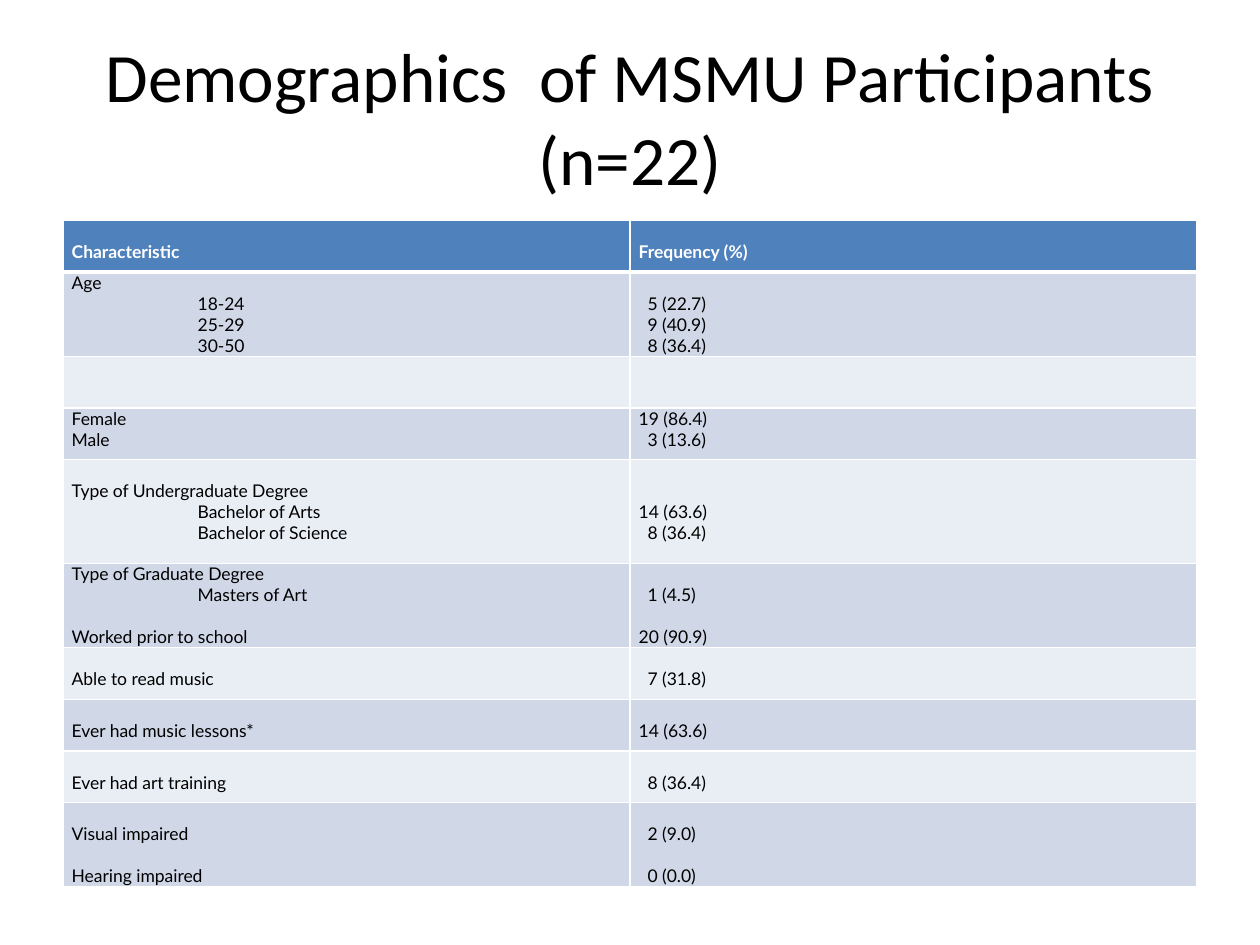
from lxml import etree
from pptx import Presentation
from pptx.dml.color import RGBColor
from pptx.enum.text import MSO_ANCHOR, PP_ALIGN
from pptx.oxml.ns import qn
from pptx.util import Pt

MIDDLE = MSO_ANCHOR.MIDDLE
TOP = MSO_ANCHOR.TOP
CENTER = PP_ALIGN.CENTER
BLACK = RGBColor(0x00, 0x00, 0x00)
WHITE = RGBColor(0xFF, 0xFF, 0xFF)
BLUE = RGBColor(0x4F, 0x81, 0xBD)
BANDS = (RGBColor(0xE9, 0xED, 0xF4), RGBColor(0xD0, 0xD8, 0xE8))

LINE = 12
LABEL_INDENT = 72
DIGIT_INDENT = 5.1
SHORT, MEDIUM, TALL = 29.5, 48, 59.5

ROWS = [
    (SHORT, [("", ""), ("Characteristic", "Frequency (%)")]),
    (MEDIUM, [("Age", ""), ("18-24", "5 (22.7)"), ("25-29", "9 (40.9)"),
              ("30-50", "8 (36.4)")]),
    (SHORT, []),
    (SHORT, [("Female", "19 (86.4)"), ("Male", "3 (13.6)")]),
    (TALL, [("", ""), ("Type of Undergraduate Degree", ""),
            ("Bachelor of Arts", "14 (63.6)"), ("Bachelor of Science", "8 (36.4)")]),
    (MEDIUM, [("Type of Graduate Degree", ""), ("Masters of Art", "1 (4.5)"),
              ("", ""), ("Worked prior to school", "20 (90.9)")]),
    (SHORT, [("", ""), ("Able to read music", "7 (31.8)")]),
    (SHORT, [("", ""), ("Ever had music lessons*", "14 (63.6)")]),
    (SHORT, [("", ""), ("Ever had art training", "8 (36.4)")]),
    (MEDIUM, [("", ""), ("Visual impaired", "2 (9.0)"), ("", ""),
              ("Hearing impaired", "0 (0.0)")]),
]
SUBITEMS = {"18-24", "25-29", "30-50", "Bachelor of Arts", "Bachelor of Science",
            "Masters of Art"}


def indent_of(text):
    if text in SUBITEMS:
        return LABEL_INDENT
    return DIGIT_INDENT if text[1:2] == " " else 0


class SlideBuilder:
    title_font = "Calibri"
    table_font = "Lato"

    def __init__(self, slide):
        self.slide = slide

    def format_span(self, span, font, size, color, bold=False):
        span.font.name = font
        span.font.size = Pt(size)
        span.font.color.rgb = color
        span.font.bold = bold

    def title(self, text, left, top, width, height):
        box = self.slide.shapes.add_textbox(Pt(left), Pt(top), Pt(width), Pt(height))
        frame = box.text_frame
        frame.word_wrap = True
        frame.vertical_anchor = MIDDLE
        frame.text = text
        para = frame.paragraphs[0]
        para.alignment = CENTER
        self.format_span(para.runs[0], self.title_font, 39.6, BLACK)

    def border(self, cell, side, width):
        line = etree.SubElement(cell._tc.get_or_add_tcPr(), qn(f"a:ln{side}"),
                                w=str(Pt(width)))
        fill = etree.SubElement(line, qn("a:solidFill"))
        etree.SubElement(fill, qn("a:srgbClr"), val=str(WHITE))

    def cell(self, cell, lines, row):
        header = row == 0
        for side in "LRTB":
            thick = (row, side) in ((0, "B"), (1, "T"))
            self.border(cell, side, 3 if thick else 1)
        cell.fill.solid()
        cell.fill.fore_color.rgb = BLUE if header else BANDS[row % 2]
        cell.vertical_anchor = TOP
        cell.margin_left = cell.margin_right = Pt(5)
        cell.margin_top = cell.margin_bottom = 0

        frame = cell.text_frame
        gap, started = 0, False
        for text in lines:
            if not text:
                gap += LINE
                continue
            para = frame.add_paragraph() if started else frame.paragraphs[0]
            para.text = text
            if indent_of(text):
                para._p.get_or_add_pPr().set("marL", str(Pt(indent_of(text))))
            if started:
                para.space_before = Pt(gap)
            else:
                cell.margin_top = Pt(gap)
            self.format_span(para.runs[0], self.table_font, 10,
                             WHITE if header else BLACK, header)
            gap, started = 0, True

    def table(self, rows, left, top, width):
        total = sum(height for height, _ in rows)
        table = self.slide.shapes.add_table(len(rows), 2, Pt(left), Pt(top),
                                            Pt(width), Pt(total)).table
        for column in table.columns:
            column.width = Pt(width / 2)
        for row, (height, pairs) in enumerate(rows):
            table.rows[row].height = Pt(height)
            for column in range(2):
                self.cell(table.cell(row, column), [pair[column] for pair in pairs], row)


def main():
    deck = Presentation()
    deck.slide_width, deck.slide_height = Pt(720), Pt(540)
    page = SlideBuilder(deck.slides.add_slide(deck.slide_layouts[6]))
    page.title("Demographics  of MSMU Participants (n=22)", 36, 21.6, 648, 90)
    page.table(ROWS, 36, 126, 648)
    deck.save("out.pptx")


if __name__ == "__main__":
    main()
